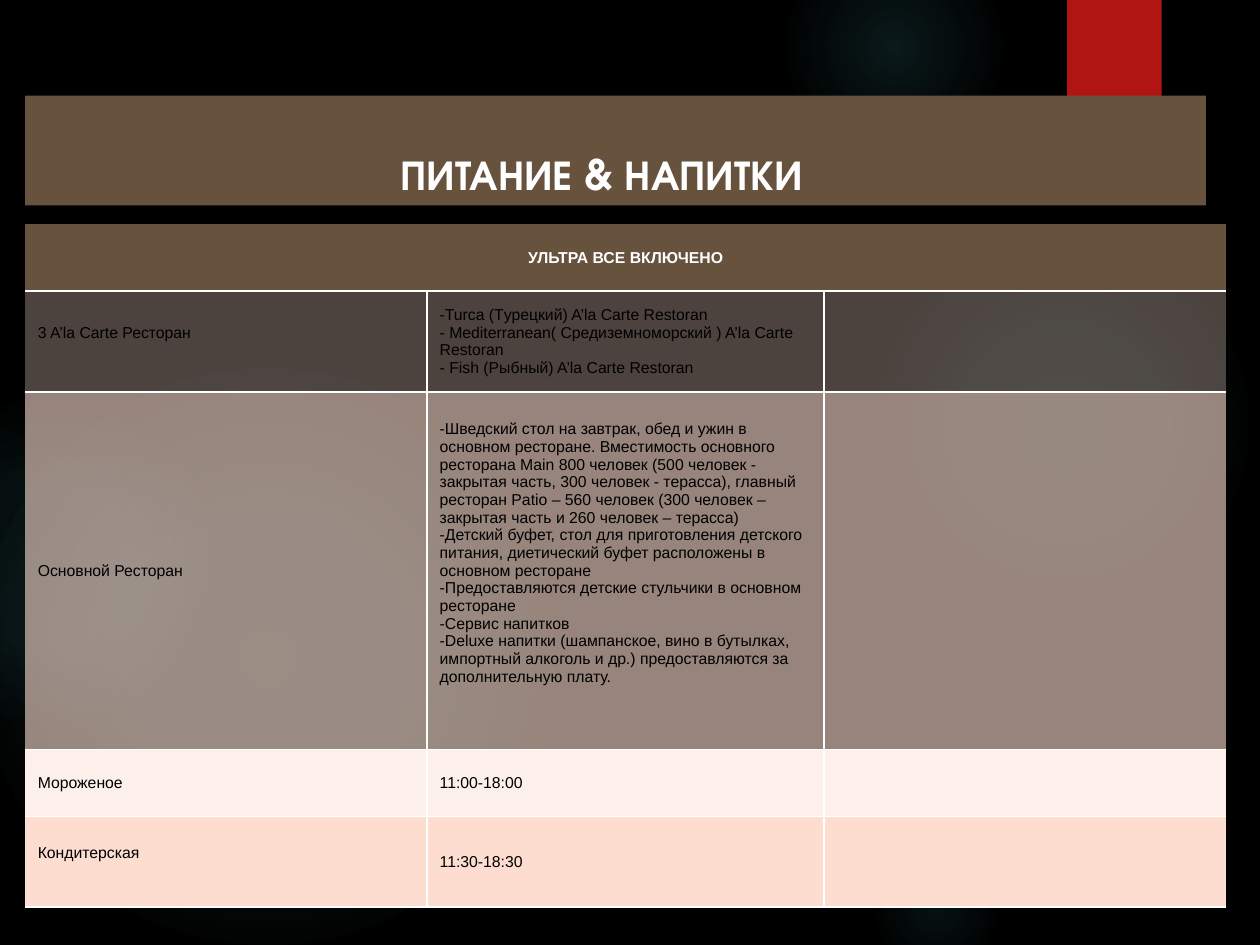
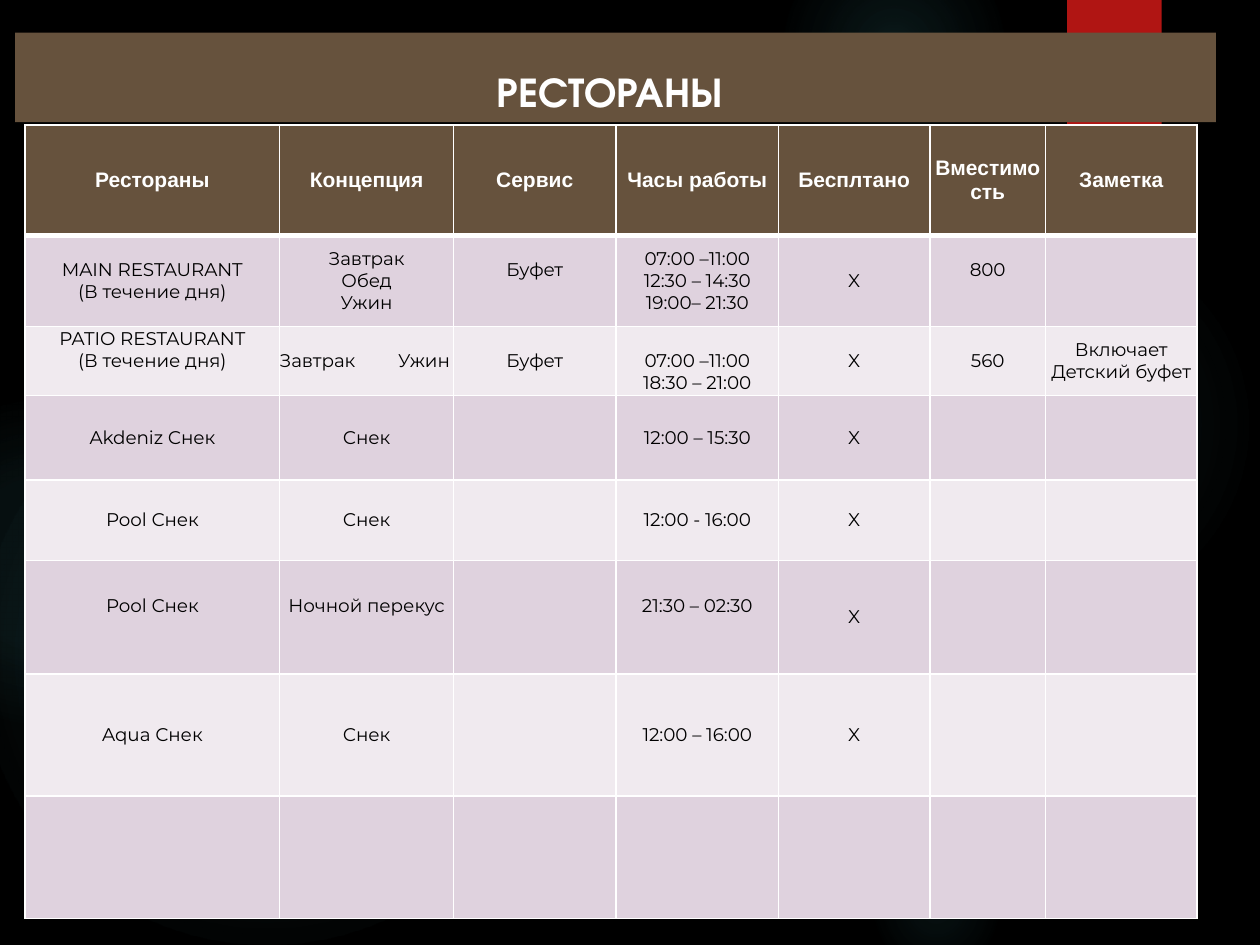
from lxml.etree import SubElement
from pptx import Presentation
from pptx.dml.color import RGBColor
from pptx.enum.shapes import MSO_SHAPE
from pptx.enum.text import MSO_ANCHOR, PP_ALIGN
from pptx.oxml.ns import qn
from pptx.util import Inches, Pt

COLOURS = {
    "night": "000000", "brown": "66523D", "red": "B01513", "glow": "50B9C1",
    "white": "FFFFFF", "peach": "FCDDCF", "cream": "FDEFE9",
    "lilac": "DFD2DE", "mist": "F0EAEF",
}
TITLE_FONT = "TeX Gyre Adventor"
PLAIN_TABLE = "{2D5ABB26-0587-4C30-8999-92F81FD0307C}"

GLOWS = [
    (6.89, 1.83, 3.08, ((0, 7), (36, 6), (69, 0))),
    (6.22, -0.5, 1.75, ((0, 14), (36, 7), (73, 0))),
    (6.89, 6.67, 1.08, ((0, 9), (36, 5), (66, 0))),
    (-0.17, 2.92, 4.58, ((0, 11), (36, 10), (75, 0))),
    (-0.92, 3.17, 2.58, ((0, 8), (36, 8), (72, 0))),
]
RIBBON = (8.47, 0, 0.75, 1.2)

MAIN_RESTAURANT = "\n".join([
    "-Шведский стол на завтрак, обед и ужин в основном ресторане. Вместимость основного "
    "ресторана Main 800 человек (500 человек - закрытая часть, 300 человек - терасса), главный "
    "ресторан Patio – 560 человек (300 человек – закрытая часть и 260 человек – терасса)",
    "-Детский буфет, стол для приготовления детского питания, диетический буфет расположены "
    "в основном ресторане",
    "-Предоставляются детские стульчики в основном ресторане",
    "-Сервис напитков",
    "-Deluxe напитки (шампанское, вино в бутылках, импортный алкоголь и др.) предоставляются "
    "за дополнительную плату.",
])
A_LA_CARTE = "\n".join([
    "-Turca (Tурецкий) A’la Carte Restoran",
    "- Mediterranean( Средиземноморский ) A’la Carte Restoran",
    "- Fish (Рыбный) A’la Carte Restoran",
])

PAGES = [
    {
        "title": "ПИТАНИЕ & НАПИТКИ",
        "title_at": (0.2, 0.76, 9.37, 0.87),
        "title_indent": 2.98,
        "table_at": (0.2, 1.78),
        "columns": [3.19, 3.15, 3.19],
        "rows": [0.53, 0.8, 2.84, 0.53, 0.72],
        "cells": [
            ["УЛЬТРА ВСЕ ВКЛЮЧЕНО", "", ""],
            ["3 A’la Carte Ресторан", A_LA_CARTE, ""],
            ["Основной Ресторан", MAIN_RESTAURANT, ""],
            ["Мороженое", "11:00-18:00", ""],
            ["Кондитерская", "11:30-18:30", ""],
        ],
        "fills": [("brown", 100), ("peach", 30), ("peach", 60), ("cream", 100), ("peach", 100)],
        "lifts": {(1, 0): 1, (2, 1): 2, (4, 0): 1},
        "line": 0.14,
        "margins": (0.1, 0.05),
        "header": ("Arial", 9),
        "body": ("Arial", 9),
        "align": PP_ALIGN.LEFT,
        "merge_header": True,
        "framed": False,
        "header_rule": 1,
    },
    {
        "title": "РЕСТОРАНЫ",
        "title_at": (0.12, 0.26, 9.53, 0.71),
        "title_indent": 3.82,
        "table_at": (0.2, 0.99),
        "columns": [2.02, 1.38, 1.29, 1.29, 1.2, 0.92, 1.2],
        "rows": [0.88, 0.72, 0.55, 0.67, 0.64, 0.9, 0.97, 0.97],
        "cells": [
            ["Рестораны", "Концепция", "Сервис", "Часы работы", "Бесплтано", "Вместимость",
             "Заметка"],
            ["MAIN RESTAURANT\n(В течение дня)", "Завтрак\nОбед\nУжин", "Буфет",
             "07:00 –11:00\n12:30 – 14:30\n19:00– 21:30", "X", "800", ""],
            ["PATIO RESTAURANT\n(В течение дня)", "Завтрак\tУжин", "Буфет",
             "07:00 –11:00\n18:30 – 21:00", "X", "560", "Включает Детский буфет"],
            ["Akdeniz Снек", "Снек", "", "12:00 – 15:30", "X", "", ""],
            ["Pool Снек", "Снек", "", "12:00 - 16:00", "X", "", ""],
            ["Pool Снек", "Ночной перекус", "", "21:30 – 02:30", "X", "", ""],
            ["Aqua Снек", "Снек", "", "12:00 – 16:00", "X", "", ""],
            [""] * 7,
        ],
        "fills": [("brown", 100)] + [("lilac", 100), ("mist", 100)] * 3 + [("lilac", 100)],
        "lifts": {(1, 2): 1, (1, 5): 1, (2, 0): 1, (2, 3): -1, (5, 0): 1, (5, 1): 1, (5, 3): 1},
        "line": 0.18,
        "margins": (0, 0),
        "header": ("Arial", 12),
        "body": ("Montserrat", 10.5),
        "align": PP_ALIGN.CENTER,
        "merge_header": False,
        "framed": True,
        "header_rule": 3,
    },
]


def colour(name):
    return RGBColor.from_string(COLOURS[name])


def add_child(parent, tag, **attributes):
    return SubElement(parent, qn(tag), {key: str(value) for key, value in attributes.items()})


def add_colour(parent, name, alpha=100):
    tint = add_child(parent, "a:srgbClr", val=COLOURS[name])
    if alpha < 100:
        add_child(tint, "a:alpha", val=alpha * 1000)


def add_plain_shape(page, kind, place, fill):
    shape = page.shapes.add_shape(kind, *map(Inches, place))
    shape.shadow.inherit = False
    shape.line.fill.background()
    shape.fill.solid()
    shape.fill.fore_color.rgb = colour(fill)
    return shape


def add_backdrop(page):
    page.background.fill.solid()
    page.background.fill.fore_color.rgb = colour("night")
    for left, top, size, stops in GLOWS:
        glow = add_plain_shape(page, MSO_SHAPE.OVAL, (left, top, size, size), "glow")
        solid = glow.element.spPr.find(qn("a:solidFill"))
        gradient = add_child(solid.getparent(), "a:gradFill", rotWithShape=1)
        solid.getparent().replace(solid, gradient)
        stop_list = add_child(gradient, "a:gsLst")
        for position, alpha in stops:
            add_colour(add_child(stop_list, "a:gs", pos=position * 1000), "glow", alpha)
        circle = add_child(gradient, "a:path", path="circle")
        add_child(circle, "a:fillToRect", l=50000, t=50000, r=50000, b=50000)
    ribbon = add_plain_shape(page, MSO_SHAPE.RECTANGLE, RIBBON, "red")
    effects = ribbon.element.spPr.find(qn("a:effectLst"))
    shadow = add_child(effects, "a:outerShdw", blurRad=Pt(3), dist=Pt(2), dir=90 * 60000)
    add_colour(shadow, "night", 45)


def format_runs(paragraph, font, size, tint, bold):
    for span in paragraph.runs:
        span.font.name = font
        span.font.size = Pt(size)
        span.font.bold = bold
        span.font.color.rgb = colour(tint)


def add_title(page, content):
    title = page.shapes.title
    title.element.getparent().append(title.element)
    title.left, title.top, title.width, title.height = map(Inches, content["title_at"])
    title.fill.solid()
    title.fill.fore_color.rgb = colour("brown")
    frame = title.text_frame
    frame.text = content["title"]
    frame.vertical_anchor = MSO_ANCHOR.BOTTOM
    frame.margin_left = Inches(content["title_indent"])
    frame.paragraphs[0].alignment = PP_ALIGN.LEFT
    format_runs(frame.paragraphs[0], TITLE_FONT, 24, "white", True)


def border_widths(content, row, column):
    widths = {"B": content["header_rule"] if row == 0 else 1}
    if row > 0:
        widths["T"] = content["header_rule"] if row == 1 else 1
    elif content["framed"]:
        widths["T"] = 1
    if content["framed"] or row > 0:
        if content["framed"] or column > 0:
            widths["L"] = 1
        if content["framed"] or column < len(content["columns"]) - 1:
            widths["R"] = 1
    return widths


def format_cell(cell, content, row, column):
    properties = cell._tc.get_or_add_tcPr()
    widths = border_widths(content, row, column)
    for side in "LRTB":
        if side in widths:
            line = add_child(properties, f"a:ln{side}", w=Pt(widths[side]))
            add_colour(add_child(line, "a:solidFill"), "white")
    fill, alpha = content["fills"][row]
    add_colour(add_child(properties, "a:solidFill"), fill, alpha)

    side_margin, end_margin = map(Inches, content["margins"])
    lift = content["lifts"].get((row, column), 0) * content["line"]
    cell.margin_left = cell.margin_right = side_margin
    cell.margin_top = end_margin + Inches(max(-lift, 0))
    cell.margin_bottom = end_margin + Inches(max(lift, 0))
    cell.vertical_anchor = MSO_ANCHOR.MIDDLE

    text = content["cells"][row][column]
    if not text:
        return
    cell.text_frame.text = text
    header = row == 0
    font, size = content["header" if header else "body"]
    for paragraph in cell.text_frame.paragraphs:
        paragraph.alignment = PP_ALIGN.CENTER if header else content["align"]
        if "\t" in paragraph.text:
            paragraph.alignment = PP_ALIGN.LEFT
            tabs = add_child(paragraph._p.get_or_add_pPr(), "a:tabLst")
            add_child(tabs, "a:tab", pos=Inches(0.94), algn="l")
        format_runs(paragraph, font, size, "white" if header else "night", header)


def add_table(page, content):
    columns, rows = content["columns"], content["rows"]
    size = (sum(columns), sum(rows))
    place = map(Inches, content["table_at"] + size)
    table = page.shapes.add_table(len(rows), len(columns), *place).table
    table._tbl.tblPr.find(qn("a:tableStyleId")).text = PLAIN_TABLE
    for column, width in enumerate(columns):
        table.columns[column].width = Inches(width)
    for row, height in enumerate(rows):
        table.rows[row].height = Inches(height)
        for column in range(len(columns)):
            format_cell(table.cell(row, column), content, row, column)
    if content["merge_header"]:
        table.cell(0, 0).merge(table.cell(0, len(columns) - 1))


def main():
    deck = Presentation()
    deck.slide_width, deck.slide_height = Inches(10), Inches(7.5)
    for content in PAGES:
        page = deck.slides.add_slide(deck.slide_layouts[5])
        add_backdrop(page)
        add_title(page, content)
        add_table(page, content)
    deck.save("out.pptx")


if __name__ == "__main__":
    main()
